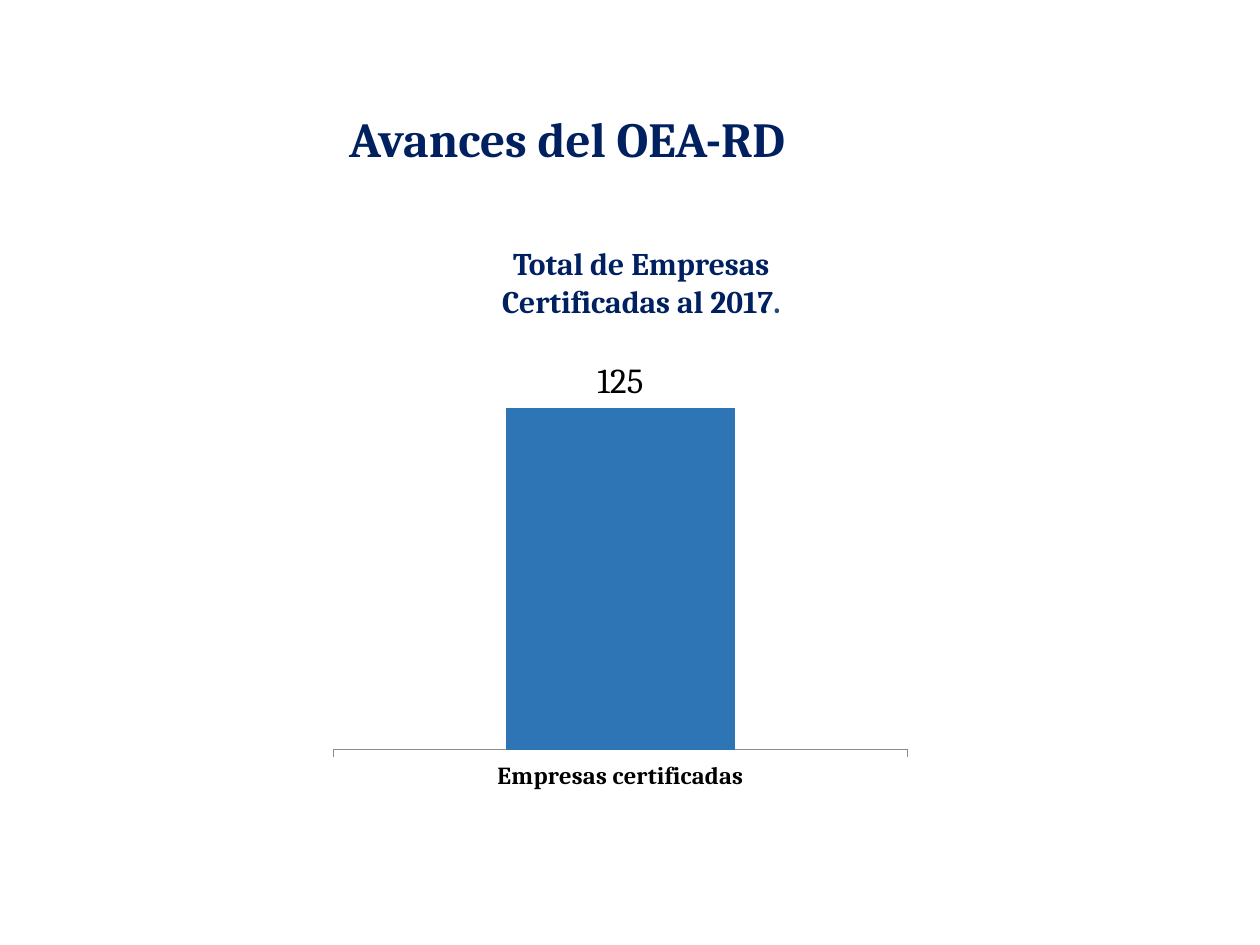
from pptx import Presentation
from pptx.chart.data import CategoryChartData
from pptx.dml.color import RGBColor
from pptx.enum.chart import XL_CHART_TYPE as CT, XL_LABEL_POSITION as LP, XL_TICK_MARK as TM
from pptx.enum.text import MSO_ANCHOR as MA, PP_ALIGN as PA
from pptx.util import Inches, Pt

FONT, NAVY, BLUE = "Cambria", "002060", "1F4E79"
TITLE = [("Avances del OEA-RD", NAVY)]
SUBTITLE = [("Total de Empresas Certificadas al 2017", NAVY), (".", BLUE)]
CATEGORY, VALUE, LABEL = "Empresas certificadas", 70, "125"


def rgb(value):
    return RGBColor.from_string(value)


def set_font(font, size, color="000000", bold=False, name=FONT):
    font.name, font.size, font.bold = name, Pt(size), bold
    font.color.rgb = rgb(color)


def place(sp, left, top, width, height):
    sp.left, sp.top = Inches(left), Inches(top)
    sp.width, sp.height = Inches(width), Inches(height)


def write(sp, runs, size, align=PA.LEFT, anchor=MA.TOP):
    tf = sp.text_frame
    tf.word_wrap = True
    tf.vertical_anchor = anchor
    p = tf.paragraphs[0]
    p.alignment = align
    for text, color in runs:
        r = p.add_run()
        r.text = text
        set_font(r.font, size, color, bold=True)


def add_certified_chart(s):
    data = CategoryChartData()
    data.categories = [CATEGORY]
    data.add_series("Series 1", [VALUE])
    box = [Inches(n) for n in (2.55, 2.78, 4.75, 3.57)]
    chart = s.shapes.add_chart(CT.COLUMN_CLUSTERED, *box, data).chart
    chart.has_legend = chart.has_title = False
    set_font(chart.font, 10, name="Calibri")

    axis = chart.category_axis
    axis.major_tick_mark = TM.OUTSIDE
    axis.format.line.color.rgb = rgb("8B8B8B")
    set_font(axis.tick_labels.font, 14, bold=True)
    scale = chart.value_axis
    scale.visible = scale.has_major_gridlines = False

    plot = chart.plots[0]
    plot.gap_width = 150
    plot.vary_by_categories = False
    bars = plot.series[0]
    bars.format.fill.solid()
    bars.format.fill.fore_color.rgb = rgb("2E75B6")
    labels = bars.data_labels
    labels.show_value = True
    labels.position = LP.OUTSIDE_END
    set_font(labels.font, 20, bold=True)
    label = bars.points[0].data_label
    r = label.text_frame.paragraphs[0].add_run()
    r.text = LABEL
    set_font(r.font, 20)
    label.position = LP.OUTSIDE_END


prs = Presentation()
prs.slide_width, prs.slide_height = Inches(10), Inches(7.5)
s = prs.slides.add_slide(prs.slide_layouts[5])
add_certified_chart(s)

subtitle = s.shapes.add_textbox(0, 0, 0, 0)
place(subtitle, 3.3, 1.92, 3.58, 0.63)
write(subtitle, SUBTITLE, 18, PA.CENTER, MA.MIDDLE)

title = s.shapes.title
place(title, 2.67, 0.81, 4.55, 0.57)
write(title, TITLE, 28)

prs.save("out.pptx")
